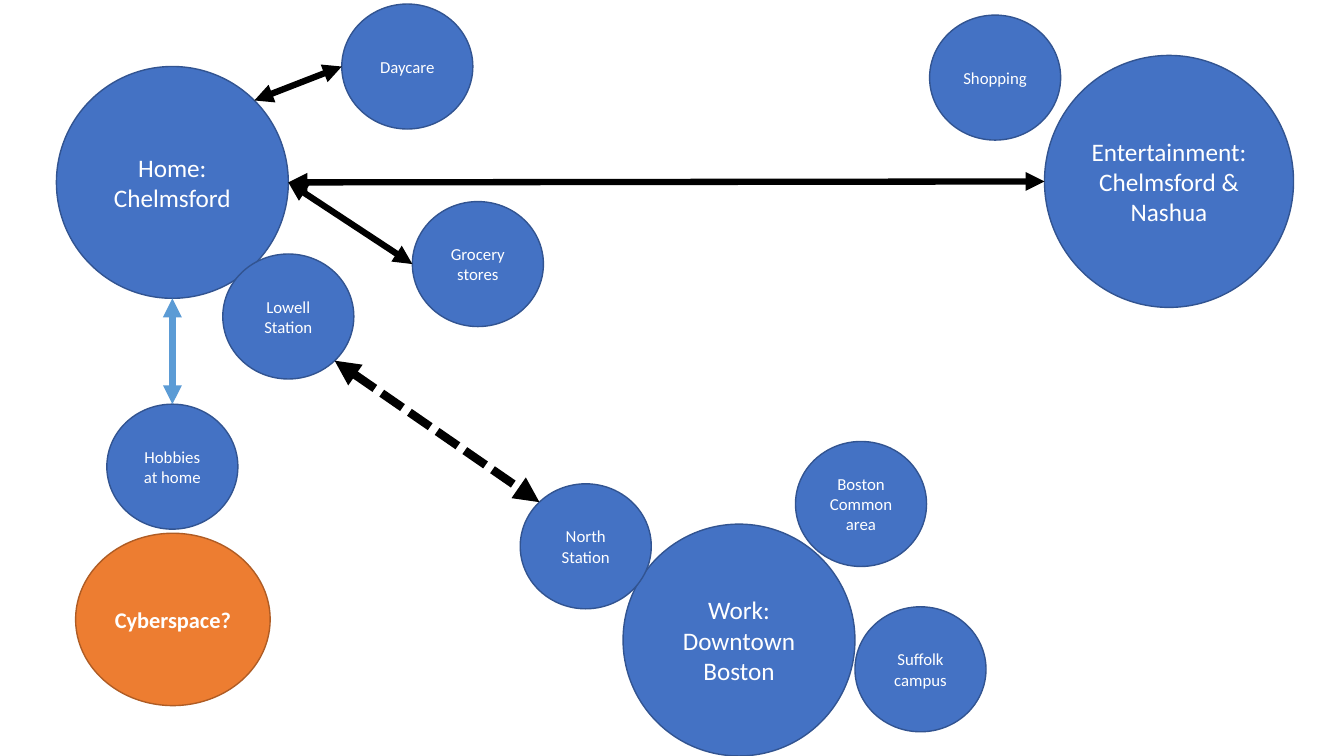
import math
from dataclasses import dataclass

from lxml import etree
from pptx import Presentation
from pptx import util as u
from pptx.dml.color import RGBColor
from pptx.enum import dml, shapes, text
from pptx.oxml import ns


@dataclass(frozen=True)
class Theme:
    font: str = "Calibri"
    white: str = "FFFFFF"
    black: str = "000000"
    blue: str = "4472C4"
    blue_edge: str = "325491"
    sky: str = "5B9BD5"
    orange: str = "ED7D31"
    orange_edge: str = "AF5C24"
    place_size: int = 18
    accent_size: int = 16
    stop_size: int = 12
    edge: float = 1
    link: float = 4.5
    train: float = 6


THEME = Theme()
PLACE = {"size": u.Pt(THEME.place_size)}
STOP = {"size": u.Pt(THEME.stop_size)}
ACCENT = {"size": u.Pt(THEME.accent_size), "bold": True}
STOP_SIZE = (1.3, 1.24)

PLACES = {
    "home": (["Home:", "Chelmsford"], 0.56, 0.66, 2.3, 2.3),
    "entertainment": (["Entertainment:", "Chelmsford & Nashua"], 10.36, 0.55, 2.47, 2.5),
    "work": (["Work:", "Downtown Boston"], 6.18, 5.2, 2.3, 2.3),
}
STOPS = {
    "daycare": ("Daycare", 3.39, 0.04),
    "grocery": ("Grocery stores", 4.09, 2),
    "lowell": ("Lowell Station", 2.21, 2.52),
    "north": ("North Station", 5.16, 4.8),
    "suffolk": ("Suffolk campus", 8.48, 6.02),
    "common": ("Boston Common area", 7.89, 4.38),
    "shopping": ("Shopping", 9.22, 0.15),
    "hobbies": ("Hobbies at home", 1.06, 4.01),
}
RIGHT, LOWER_RIGHT, BOTTOM, LEFT, UPPER_LEFT, TOP, UPPER_RIGHT = 0, 45, 90, 180, 225, 270, 315
LINKS = [
    ("lowell", LOWER_RIGHT, "north", UPPER_LEFT, THEME.black, THEME.train, dml.MSO_LINE.SQUARE_DOT),
    ("home", UPPER_RIGHT, "daycare", LEFT, THEME.black, THEME.link, None),
    ("home", RIGHT, "grocery", LEFT, THEME.black, THEME.link, None),
    ("home", BOTTOM, "hobbies", TOP, THEME.sky, THEME.link, None),
    ("home", RIGHT, "entertainment", LEFT, THEME.black, THEME.link, None),
]


def add_circle(page, lines, left, top, width, height, style,
               fill=THEME.blue, edge=THEME.blue_edge):
    circle = page.shapes.add_shape(
        shapes.MSO_SHAPE.OVAL, *map(u.Inches, (left, top, width, height)))
    circle.shadow.inherit = False
    circle.fill.solid()
    circle.fill.fore_color.rgb = RGBColor.from_string(fill)
    circle.line.color.rgb = RGBColor.from_string(edge)
    circle.line.width = u.Pt(THEME.edge)
    frame = circle.text_frame
    frame.word_wrap = True
    frame.vertical_anchor = text.MSO_ANCHOR.MIDDLE
    for index, line in enumerate(lines):
        para = frame.add_paragraph() if index else frame.paragraphs[0]
        para.alignment = text.PP_ALIGN.CENTER
        span = para.add_run()
        span.text = line
        span.font.color.rgb = RGBColor.from_string(THEME.white)
        for name, value in {"name": THEME.font, **style}.items():
            setattr(span.font, name, value)
    return circle


def rim_point(circle, degrees):
    angle = math.radians(degrees)
    across, down = circle.width / 2, circle.height / 2
    return (round(circle.left + across * (1 + math.cos(angle))),
            round(circle.top + down * (1 + math.sin(angle))))


def add_link(page, start, end, color, width, dash):
    link = page.shapes.add_connector(shapes.MSO_CONNECTOR.STRAIGHT, *start, *end)
    link.line.color.rgb = RGBColor.from_string(color)
    link.line.width = u.Pt(width)
    if dash:
        link.line.dash_style = dash
    outline = link.line._get_or_add_ln()
    for tag in ("a:headEnd", "a:tailEnd"):
        etree.SubElement(outline, ns.qn(tag), type="triangle")
    etree.SubElement(link._element.spPr, ns.qn("a:effectLst"))


def main():
    deck = Presentation()
    deck.slide_width, deck.slide_height = u.Inches(13.33), u.Inches(7.5)
    page = deck.slides.add_slide(deck.slide_layouts[6])
    circles = {}
    for key, (lines, *bounds) in PLACES.items():
        circles[key] = add_circle(page, lines, *bounds, PLACE)
    for key, (label, left, top) in STOPS.items():
        circles[key] = add_circle(page, [label], left, top, *STOP_SIZE, STOP)
    for source, leave, target, arrive, color, width, dash in LINKS:
        add_link(page, rim_point(circles[source], leave),
                 rim_point(circles[target], arrive), color, width, dash)
    add_circle(page, ["Cyberspace?"], 0.75, 5.29, 1.93, 1.71, ACCENT,
               THEME.orange, THEME.orange_edge)
    deck.save("out.pptx")


if __name__ == "__main__":
    main()
